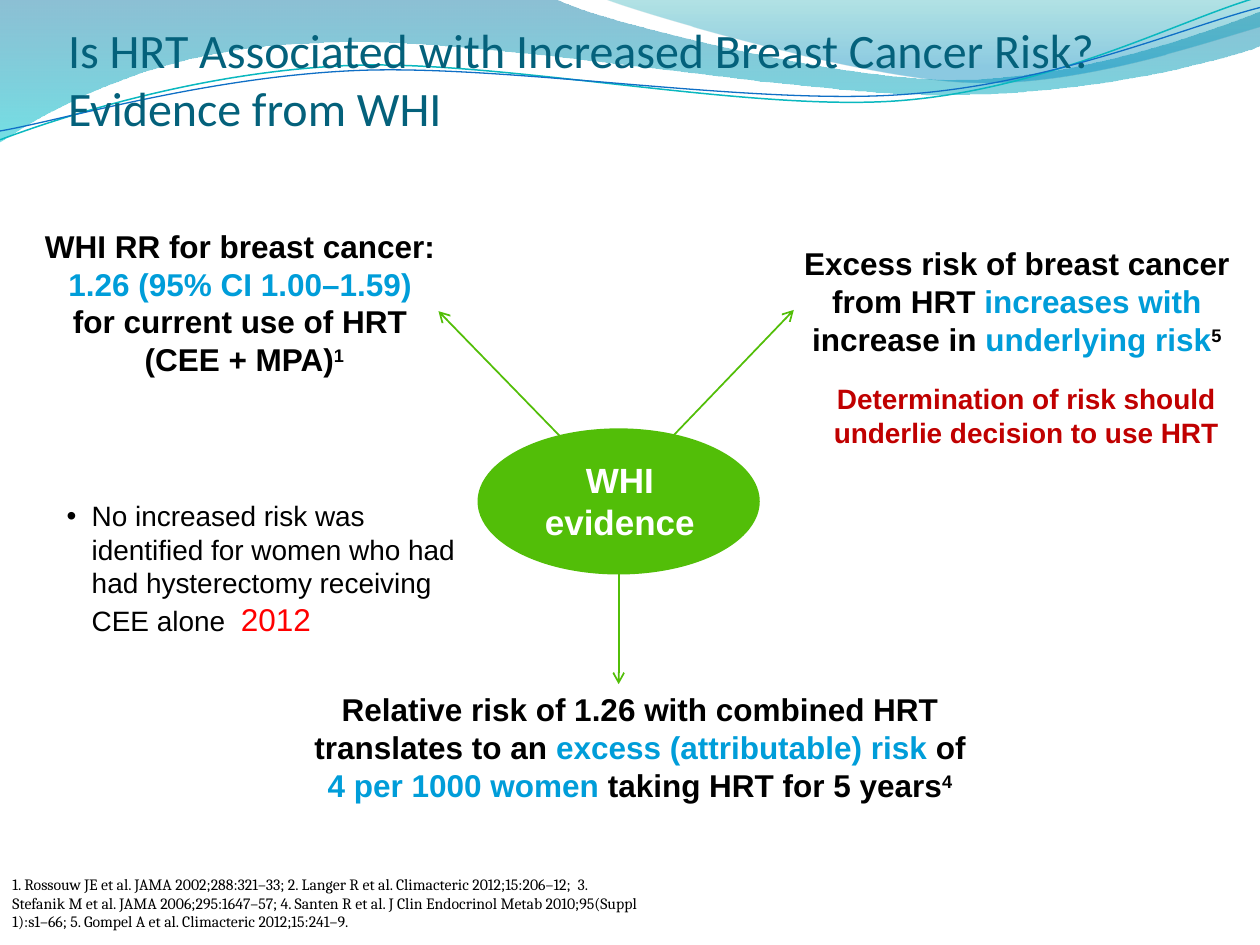
from math import cos, radians, sin

from pptx import Presentation
from pptx.dml.color import RGBColor
from pptx.enum.shapes import MSO_CONNECTOR, MSO_SHAPE
from pptx.enum.text import MSO_ANCHOR, PP_ALIGN
from pptx.oxml import parse_xml
from pptx.oxml.ns import nsdecls, qn
from pptx.util import Inches, Pt

STRAIGHT, OVAL = MSO_CONNECTOR.STRAIGHT, MSO_SHAPE.OVAL
TOP, BOTTOM = MSO_ANCHOR.TOP, MSO_ANCHOR.BOTTOM
LEFT, CENTER = PP_ALIGN.LEFT, PP_ALIGN.CENTER

COLORS = {
    "title": "04617B", "text": "000000", "white": "FFFFFF", "green": "52BE08",
    "blue": "009DD9", "dark_red": "C00000", "red": "FF0000",
    "wave_line": "0AB8BF", "wave_line_dark": "0F6FC6",
}
STRAND_TILT = -2.7

# Each wave is a start point followed by segments: one point for a straight
# line, three points for a cubic curve. Inches, relative to the banner.
BANDS = [
    ([(0, 0), [(4.4, -0.01)],
      [(4.76, 0.17), (6.64, 0.63), (7.58, 0.63)],
      [(8.53, 0.63), (9.58, 0.26), (10, 0.09)], [(10.01, 0.36)],
      [(9.83, 0.44), (8.7, 0.76), (7.46, 0.75)],
      [(6.22, 0.75), (3.82, 0.28), (2.57, 0.34)],
      [(1.29, 0.36), (0.46, 0.83), (-0.01, 1.13)], [(0, 0)]],
     [(0, "0074A1", 45), (100, "00C6CF", 55)]),
    ([(4.79, -0.01),
      [(5.09, 0.11), (6.82, 0.62), (7.69, 0.65)],
      [(8.56, 0.69), (9.61, 0.32), (10, 0.21)], [(10, 0)], [(4.79, -0.01)]],
     [(0, "00A1A9", 30), (80, "008BBF", 45)]),
]
STRANDS = [
    ([(0, 1.11),
      [(0.48, 0.93), (1.58, 0.57), (2.77, 0.52)],
      [(3.95, 0.47), (5.93, 0.89), (7.13, 0.8)],
      [(8.33, 0.71), (9.38, 0.15), (9.98, -0.02)]], (4.99, 0.57), "wave_line", 0.85),
    ([(0, 1.04),
      [(0.47, 0.96), (1.64, 0.61), (2.83, 0.56)],
      [(4.03, 0.51), (5.97, 0.84), (7.17, 0.75)],
      [(8.36, 0.67), (9.41, 0.21), (10, 0.06)]], (5, 0.59), "wave_line_dark", 0.75),
]


def rgb(name):
    return RGBColor.from_string(COLORS[name])


def turn(point, center, degrees):
    angle = radians(degrees)
    dx, dy = point[0] - center[0], point[1] - center[1]
    return (center[0] + dx * cos(angle) - dy * sin(angle),
            center[1] + dx * sin(angle) + dy * cos(angle))


def add_wave(page, left, top, wave, close):
    """Build an outline through the segment ends, then bend the curved segments."""
    def place(point):
        return Inches(left + point[0]), Inches(top + point[1])

    builder = page.shapes.build_freeform(*place(wave[0]))
    builder.add_line_segments([place(segment[-1]) for segment in wave[1:]], close=close)
    shape = builder.convert_to_shape()
    shape.shadow.inherit = False
    lines = list(shape.element.spPr.iter(qn("a:lnTo")))
    for line, segment in zip(lines, wave[1:]):
        if len(segment) == 3:
            points = "".join(f'<a:pt x="{x - shape.left}" y="{y - shape.top}"/>'
                             for x, y in map(place, segment))
            curve = parse_xml(f'<a:cubicBezTo {nsdecls("a")}>{points}</a:cubicBezTo>')
            line.getparent().replace(line, curve)
    return shape


def fill_gradient(shape, stops):
    """Fill from top to bottom with (position, colour, opacity) stops."""
    stop_xml = "".join(
        f'<a:gs pos="{position * 1000}"><a:srgbClr val="{color}">'
        f'<a:alpha val="{opacity * 1000}"/></a:srgbClr></a:gs>'
        for position, color, opacity in stops)
    gradient = parse_xml(f'<a:gradFill {nsdecls("a")} rotWithShape="1"><a:gsLst>{stop_xml}'
                         '</a:gsLst><a:lin ang="5400000" scaled="0"/></a:gradFill>')
    shape.element.spPr.custGeom.addnext(gradient)


def add_banner(page, left, top):
    for wave, stops in BANDS:
        band = add_wave(page, left, top, wave, close=True)
        fill_gradient(band, stops)
        band.line.fill.background()
    for wave, center, color, width in STRANDS:
        level = [turn(wave[0], center, -STRAND_TILT)]
        level += [[turn(point, center, -STRAND_TILT) for point in segment]
                  for segment in wave[1:]]
        strand = add_wave(page, left, top, level, close=False)
        strand.rotation = STRAND_TILT
        strand.fill.background()
        strand.line.color.rgb = rgb(color)
        strand.line.width = Pt(width)


def add_text(page, box, paras, size, font="Arial", bold=False, align=CENTER,
             anchor=TOP, insets=(0.1, 0.05, 0.1, 0.05), bullet=False):
    """Place paragraphs made of (text, colour, options) runs in a box."""
    frame = page.shapes.add_textbox(*map(Inches, box)).text_frame
    frame.word_wrap = True
    frame.vertical_anchor = anchor
    (frame.margin_left, frame.margin_top,
     frame.margin_right, frame.margin_bottom) = map(Inches, insets)
    for index, runs in enumerate(paras):
        para = frame.add_paragraph() if index else frame.paragraphs[0]
        para.alignment = align
        if bullet:
            props = para._p.get_or_add_pPr()
            props.set("marL", str(Inches(0.2)))
            props.set("indent", str(Inches(-0.2)))
            props.append(parse_xml(f'<a:buFont {nsdecls("a")} typeface="Arial"/>'))
            props.append(parse_xml(f'<a:buChar {nsdecls("a")} char="•"/>'))
        for text, color, *options in runs:
            span = para.add_run()
            span.text = text
            span.font.name = font
            span.font.bold = bold
            span.font.size = Pt(size)
            span.font.color.rgb = rgb(color)
            for option in options:
                if option == "super":
                    span.font._element.set("baseline", "30000")
                else:
                    span.font.size = Pt(option)


def add_arrow(page, start, end):
    arrow = page.shapes.add_connector(STRAIGHT, *map(Inches, (*start, *end)))
    arrow.line.color.rgb = rgb("green")
    arrow.line.width = Pt(1)
    arrow.line._get_or_add_ln().append(parse_xml(f'<a:tailEnd {nsdecls("a")} type="arrow"/>'))
    arrow._element.spPr.append(parse_xml(f'<a:effectLst {nsdecls("a")}/>'))


def add_hub(page, box):
    """Draw the central oval with its three arrows behind it."""
    left, top, width, height = box
    x, y = left + width / 2, top + height / 2 - 0.07
    for start_dx, dx, dy in ((-0.03, -1.43, -1.44), (0, 1.39, -1.45), (0, 0, 1.52)):
        add_arrow(page, (x + start_dx, y), (x + dx, y + dy))
    oval = page.shapes.add_shape(OVAL, *map(Inches, box))
    oval.shadow.inherit = False
    oval.fill.solid()
    oval.fill.fore_color.rgb = rgb("green")
    oval.line.fill.background()
    add_text(page, (left + 0.31, top + 0.19, 1.64, 0.77),
             [[("WHI evidence", "white")]], 20, bold=True)


def add_findings(page):
    add_text(page, (0.12, 1.75, 3.64, 1.31), [
        [("WHI RR for breast cancer: ", "text")],
        [("1.26 (95% CI 1.00–1.59) ", "blue")],
        [("for current use of HRT ", "text")],
        [("(CEE + MPA)", "text"), ("1", "text", "super")],
    ], 18, bold=True)
    add_text(page, (2.38, 5.43, 5.4, 1.01), [[
        ("Relative risk of 1.26 with combined HRT translates to an ", "text"),
        ("excess (attributable) risk ", "blue"), ("of ", "text"),
        ("4 per 1000 women ", "blue"), ("taking HRT for 5 years", "text"),
        ("4", "text", "super"),
    ]], 18, bold=True)
    add_text(page, (6.14, 1.89, 3.86, 1.01), [[
        ("Excess risk of breast cancer from HRT ", "text"), ("increases with ", "blue"),
        ("increase in ", "text"), ("underlying risk", "blue"), ("5", "text", "super"),
    ]], 18, bold=True)
    add_text(page, (6.36, 2.98, 3.57, 0.64), [[
        ("Determination of risk should underlie decision to use HRT", "dark_red"),
    ]], 16, bold=True)
    add_text(page, (0.43, 3.91, 3.3, 1.68), [[
        ("No increased risk was identified for women who had had hysterectomy "
         "receiving CEE alone  ", "text"),
        ("2012", "red", 18),
    ]], 16, align=LEFT, bullet=True)


def main():
    deck = Presentation()
    deck.slide_width, deck.slide_height = Inches(10), Inches(7.5)
    page = deck.slides.add_slide(deck.slide_layouts[6])
    add_banner(page, 0, 0)
    add_text(page, (0.54, 0.07, 9.46, 1.01), [[
        ("Is HRT Associated with Increased Breast Cancer Risk? Evidence from WHI", "title"),
    ]], 27.4, font="Calibri", align=LEFT, anchor=BOTTOM, insets=(0, 0.05, 0, 0))
    add_text(page, (0, 6.89, 5.18, 0.55), [[
        ("1. Rossouw JE et al. JAMA 2002;288:321–33; 2. Langer R et al. Climacteric "
         "2012;15:206–12;  3. Stefanik M et al. JAMA 2006;295:1647–57; 4. Santen R et al. "
         "J Clin Endocrinol Metab 2010;95(Suppl 1):s1–66; 5. Gompel A et al. Climacteric "
         "2012;15:241–9.", "text"),
    ]], 9, font="Cambria", align=LEFT)
    add_hub(page, (3.79, 3.4, 2.24, 1.16))
    add_findings(page)
    deck.save("out.pptx")


if __name__ == "__main__":
    main()
